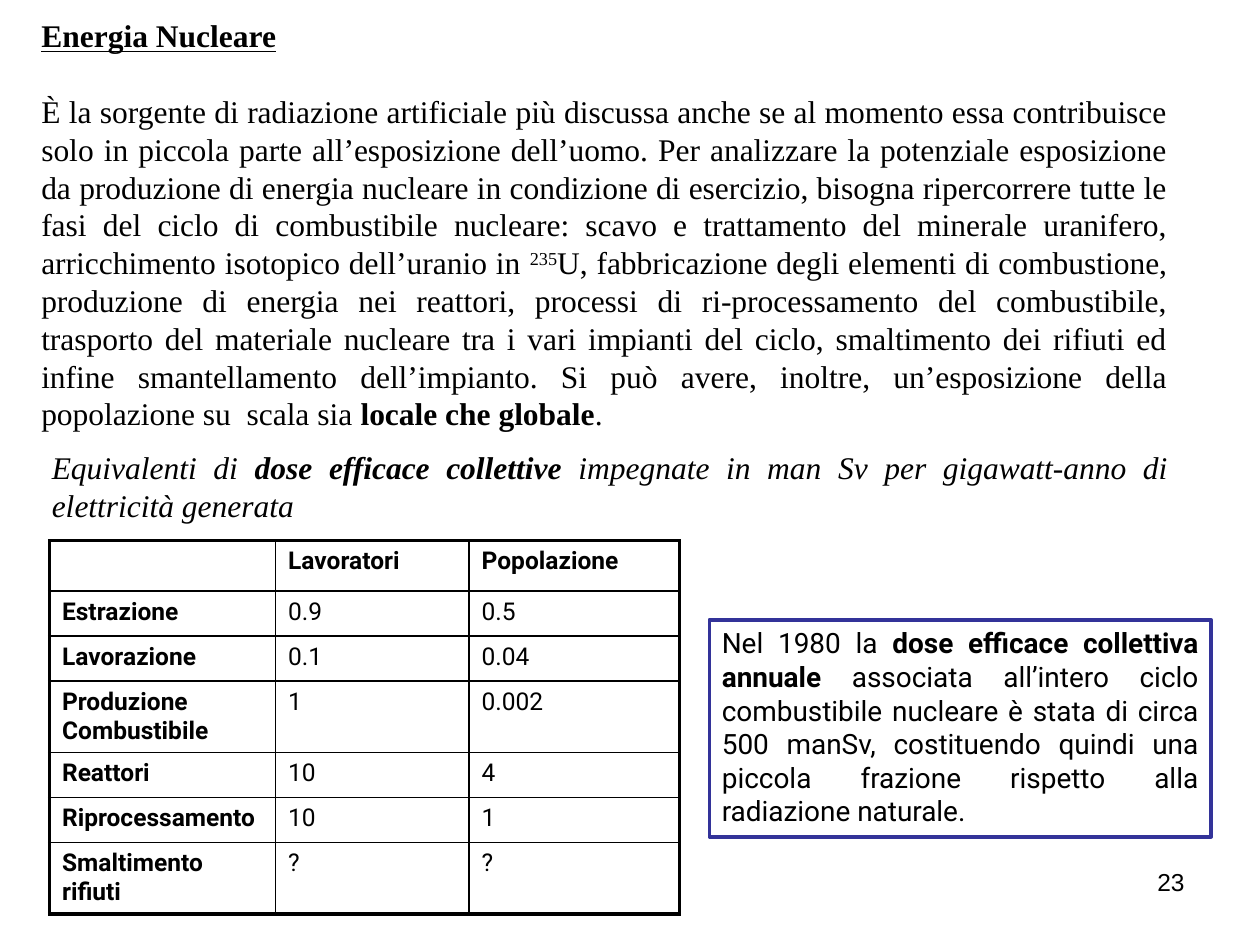
from lxml import etree
from pptx import Presentation
from pptx.dml.color import RGBColor
from pptx.enum.shapes import MSO_SHAPE
from pptx.enum.text import MSO_ANCHOR, MSO_AUTO_SIZE, PP_ALIGN
from pptx.oxml.ns import qn
from pptx.util import Pt

JUSTIFY, LEFT, RIGHT = PP_ALIGN.JUSTIFY, PP_ALIGN.LEFT, PP_ALIGN.RIGHT
TOP = MSO_ANCHOR.TOP
NO_AUTOFIT = MSO_AUTO_SIZE.NONE
RECTANGLE = MSO_SHAPE.RECTANGLE

# Content: each text is a list of (words, format changes)
BOLD = {"bold": True}
SUPERSCRIPT = {"baseline": 30000}

TITLE = [("Energia Nucleare", {"bold": True, "underline": True})]
INTRO = [
    ("È la sorgente di radiazione artificiale più discussa anche se al momento "
     "essa contribuisce solo in piccola parte all’esposizione dell’uomo. Per "
     "analizzare la potenziale esposizione da produzione di energia nucleare in "
     "condizione di esercizio, bisogna ripercorrere tutte le fasi del ciclo di "
     "combustibile nucleare: scavo e trattamento del minerale uranifero, "
     "arricchimento isotopico dell’uranio in ", {}),
    ("235", SUPERSCRIPT),
    ("U, fabbricazione degli elementi di combustione, produzione di energia nei "
     "reattori, processi di ri-processamento del combustibile, trasporto del "
     "materiale nucleare tra i vari impianti del ciclo, smaltimento dei rifiuti "
     "ed infine smantellamento dell’impianto. Si può avere, inoltre, "
     "un’esposizione della popolazione su  scala sia ", {}),
    ("locale che globale", BOLD),
    (".", {}),
]
CAPTION = [
    ("Equivalenti di ", {}),
    ("dose efficace collettive", BOLD),
    (" impegnate in man Sv per gigawatt-anno di elettricità generata", {}),
]
DOSES = [
    ("", "Lavoratori", "Popolazione"),
    ("Estrazione", "0.9", "0.5"),
    ("Lavorazione", "0.1", "0.04"),
    ("Produzione Combustibile", "1", "0.002"),
    ("Reattori", "10", "4"),
    ("Riprocessamento", "10", "1"),
    ("Smaltimento rifiuti", "?", "?"),
]
CALLOUT = [
    ("Nel 1980 la ", {}),
    ("dose efficace collettiva annuale", BOLD),
    (" associata all’intero ciclo combustibile nucleare è stata di circa 500 "
     "manSv, costituendo quindi una piccola frazione rispetto alla radiazione "
     "naturale.", {}),
]
PAGE = [("23", {})]

# Theme
THEME = {
    "ink": RGBColor(0, 0, 0),
    "frame": RGBColor(0x33, 0x33, 0x99),
    "thick": 2.25,
    "thin": 1,
    "prose": {"name": "Times New Roman", "size": Pt(18)},
    "caption": {"name": "Times New Roman", "size": Pt(18), "italic": True},
    "callout": {"name": "Roboto", "size": Pt(16)},
    "cell": {"name": "Roboto", "size": Pt(14)},
    "page": {"name": "Arial", "size": Pt(14)},
}

# Places: left, top, width, height in points
TITLE_BOX = (16.5, 5.8, 658, 29)
INTRO_BOX = (16.5, 49, 658, 226)
CAPTION_BOX = (22.5, 252.7, 652, 51)
CALLOUT_BOX = (405.4, 354.2, 286.6, 124)
PAGE_BOX = (516, 491.8, 168, 37.4)
TABLE_LEFT, TABLE_TOP = 28.3, 309
COLUMN_WIDTHS = (129.2, 110.6, 120.2)
ROW_HEIGHT = 25.7


def points(box):
    return [Pt(length) for length in box]


def write(frame, runs, style, align):
    frame.word_wrap = True
    frame.vertical_anchor = TOP
    paragraph = frame.paragraphs[0]
    paragraph.alignment = align
    for words, changes in runs:
        run = paragraph.add_run()
        run.text = words
        run.font.color.rgb = THEME["ink"]
        for key, value in {"bold": False, **style, **changes}.items():
            if key == "baseline":
                run.font._element.set("baseline", str(value))
            else:
                setattr(run.font, key, value)


def add_borders(cell, widths):
    properties = cell._tc.get_or_add_tcPr()
    for index, (side, width) in enumerate(widths.items()):
        line = etree.Element(qn("a:" + side), w=str(Pt(width)))
        fill = etree.SubElement(line, qn("a:solidFill"))
        etree.SubElement(fill, qn("a:srgbClr"), val=str(THEME["ink"]))
        properties.insert(index, line)


def add_dose_table(slide):
    last_row, last_column = len(DOSES) - 1, len(COLUMN_WIDTHS) - 1
    box = (TABLE_LEFT, TABLE_TOP, sum(COLUMN_WIDTHS), ROW_HEIGHT * len(DOSES))
    table = slide.shapes.add_table(
        len(DOSES), len(COLUMN_WIDTHS), *points(box)).table
    table.first_row = table.horz_banding = False
    for column, width in zip(table.columns, COLUMN_WIDTHS):
        column.width = Pt(width)
    for r, row in enumerate(DOSES):
        table.rows[r].height = Pt(ROW_HEIGHT)
        for c, words in enumerate(row):
            cell = table.cell(r, c)
            cell.fill.background()
            heading = {"bold": r == 0 or c == 0}
            write(cell.text_frame, [(words, heading)], THEME["cell"], LEFT)
            outer = {"lnL": c == 0, "lnR": c == last_column,
                     "lnT": r == 0, "lnB": r == last_row}
            add_borders(cell, {side: THEME["thick" if edge else "thin"]
                               for side, edge in outer.items()})


def main():
    deck = Presentation()
    deck.slide_width, deck.slide_height = Pt(720), Pt(540)
    slide = deck.slides.add_slide(deck.slide_layouts[5])

    # Title
    title = slide.shapes.title
    title.left, title.top, title.width, title.height = points(TITLE_BOX)
    title.text_frame.auto_size = NO_AUTOFIT
    write(title.text_frame, TITLE, THEME["prose"], JUSTIFY)

    # Running text and page number
    for runs, box, style, align in (
        (INTRO, INTRO_BOX, "prose", JUSTIFY),
        (CAPTION, CAPTION_BOX, "caption", JUSTIFY),
        (PAGE, PAGE_BOX, "page", RIGHT),
    ):
        text_box = slide.shapes.add_textbox(*points(box))
        write(text_box.text_frame, runs, THEME[style], align)

    # Doses per stage of the fuel cycle
    add_dose_table(slide)

    # Framed remark
    callout = slide.shapes.add_shape(RECTANGLE, *points(CALLOUT_BOX))
    callout.shadow.inherit = False
    callout.fill.background()
    callout.line.color.rgb = THEME["frame"]
    callout.line.width = Pt(THEME["thick"])
    write(callout.text_frame, CALLOUT, THEME["callout"], JUSTIFY)

    deck.save("out.pptx")


if __name__ == "__main__":
    main()
